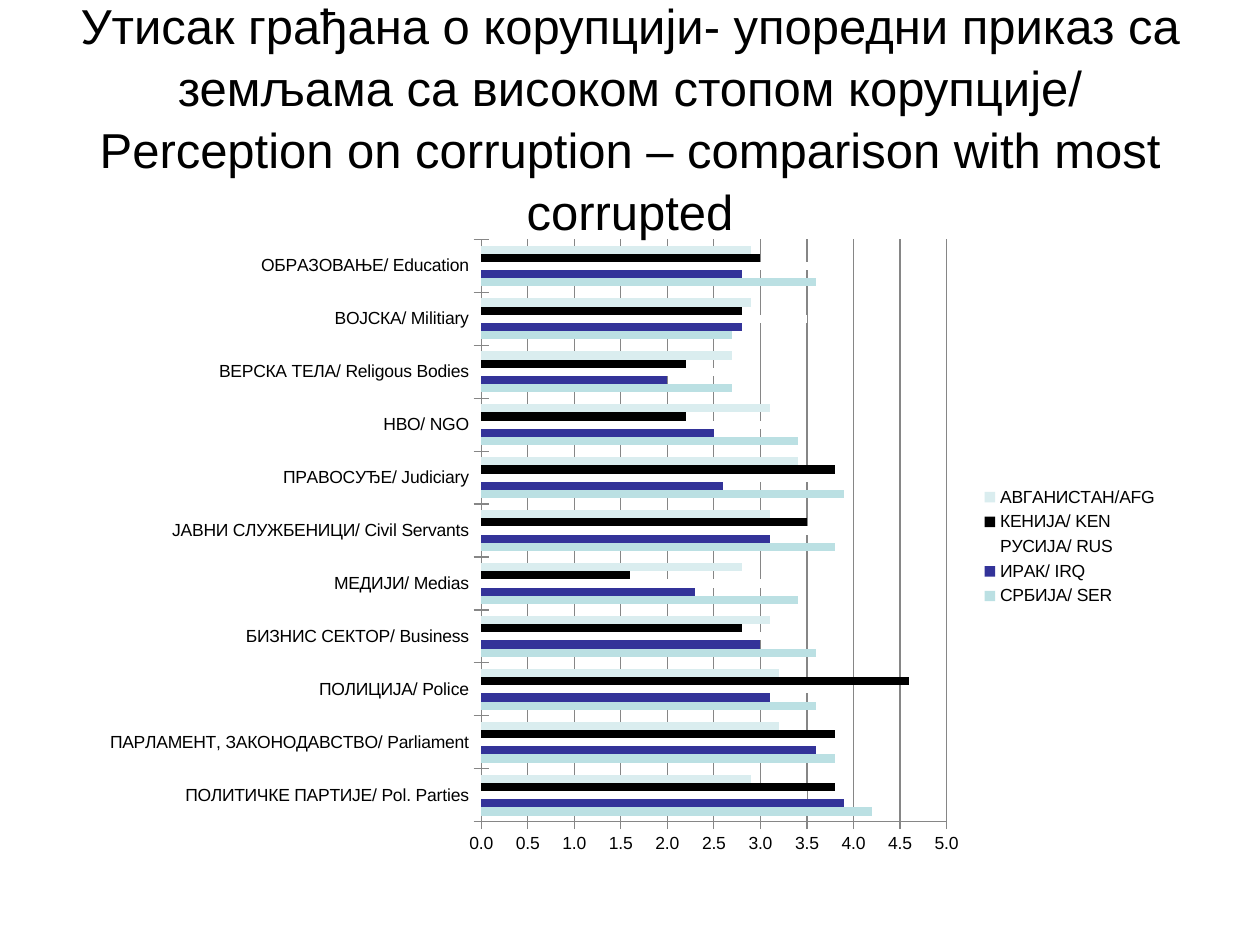
from lxml.etree import SubElement
from pptx import Presentation
from pptx.chart.data import CategoryChartData
from pptx.dml.color import RGBColor
from pptx.enum.chart import XL_CHART_TYPE as ChartType, XL_LEGEND_POSITION as LegendPos, XL_TICK_MARK as Tick
from pptx.enum.text import MSO_ANCHOR as Anchor, MSO_AUTO_SIZE as AutoSize, PP_ALIGN as Align
from pptx.oxml.ns import qn
from pptx.util import Cm, Pt


def color(hex_code):
    return RGBColor.from_string(hex_code)


def style_font(font, size):
    font.name = "Arial"
    font.size = Pt(size)
    font.bold = False
    font.color.rgb = color("000000")


prs = Presentation()
prs.slide_width, prs.slide_height = Cm(25.4), Cm(19.05)
slide = prs.slides.add_slide(prs.slide_layouts[5])

title = slide.shapes.title
title.left, title.top, title.width, title.height = Cm(1.27), Cm(0.76), Cm(22.86), Cm(3.18)
heading = title.text_frame
heading.text = (
    "Утисак грађана о корупцији- упоредни приказ са земљама са високом стопом корупције/ "
    "Perception on corruption – comparison with most corrupted"
)
heading.word_wrap = True
heading.auto_size = AutoSize.NONE
heading.vertical_anchor = Anchor.MIDDLE
heading.paragraphs[0].alignment = Align.CENTER
heading.paragraphs[0].line_spacing = 1.05
style_font(heading.paragraphs[0].font, 28)

institutions = [
    "ПОЛИТИЧКЕ ПАРТИЈЕ/ Pol. Parties",
    "ПАРЛАМЕНТ, ЗАКОНОДАВСТВО/ Parliament",
    "ПОЛИЦИЈА/ Police",
    "БИЗНИС СЕКТОР/ Business",
    "МЕДИЈИ/ Medias",
    "JAВНИ СЛУЖБЕНИЦИ/ Civil Servants",
    "ПРАВОСУЂЕ/ Judiciary",
    "НВО/ NGO",
    "ВЕРСКА ТЕЛА/ Religous Bodies",
    "ВОЈСКА/ Militiary",
    "ОБРАЗОВАЊЕ/ Education",
]
countries = [
    ("СРБИЈА/ SER", "BBE0E3", [4.2, 3.8, 3.6, 3.6, 3.4, 3.8, 3.9, 3.4, 2.7, 2.7, 3.6]),
    ("ИРАК/ IRQ", "333399", [3.9, 3.6, 3.1, 3, 2.3, 3.1, 2.6, 2.5, 2, 2.8, 2.8]),
    ("РУСИЈА/ RUS", "FFFFFF", [3.5, 3.6, 3.9, 3.4, 3.2, 3.9, 3.7, 3.1, 2.5, 3.5, 3.7]),
    ("КЕНИЈА/ KEN", "000000", [3.8, 3.8, 4.6, 2.8, 1.6, 3.5, 3.8, 2.2, 2.2, 2.8, 3]),
    ("АВГАНИСТАН/AFG", "DAEDEF", [2.9, 3.2, 3.2, 3.1, 2.8, 3.1, 3.4, 3.1, 2.7, 2.9, 2.9]),
]
perception = CategoryChartData(number_format="0.0")
perception.categories = institutions
for country, _, scores in countries:
    perception.add_series(country, scores)

chart = slide.shapes.add_chart(
    ChartType.BAR_CLUSTERED, Cm(1.78), Cm(4.57), Cm(21.82), Cm(12.9), perception
).chart
style_font(chart.font, 10)
chart.has_title = False
chart.has_legend = True
chart.legend.position = LegendPos.RIGHT
chart.legend.include_in_layout = False

bars = chart.plots[0]
bars.gap_width = 150
bars.overlap = 0
bars.vary_by_categories = False
for series, (_, fill, _) in zip(bars.series, countries):
    series.invert_if_negative = False
    series.format.fill.solid()
    series.format.fill.fore_color.rgb = color(fill)

score_axis = chart.value_axis
score_axis.minimum_scale, score_axis.maximum_scale, score_axis.major_unit = 0, 5, 0.5
score_axis.has_major_gridlines = True
score_axis.tick_labels.number_format = "0.0"
score_axis.tick_labels.number_format_is_linked = False
for axis in (chart.category_axis, score_axis):
    axis.major_tick_mark = Tick.CROSS
    axis.minor_tick_mark = Tick.NONE
    axis.format.line.color.rgb = color("868686")
score_axis.major_gridlines.format.line.color.rgb = color("868686")

plot_area = chart._chartSpace.chart.plotArea
for old_layout in plot_area.findall(qn("c:layout")):
    plot_area.remove(old_layout)
layout = SubElement(plot_area, qn("c:layout"))
plot_area.insert(0, layout)
manual = SubElement(layout, qn("c:manualLayout"))
for tag, value in [
    ("layoutTarget", "inner"), ("xMode", "edge"), ("yMode", "edge"),
    ("x", "0.363"), ("y", "0.02"), ("w", "0.43"), ("h", "0.91"),
]:
    SubElement(manual, qn(f"c:{tag}")).set("val", value)

prs.save("out.pptx")
